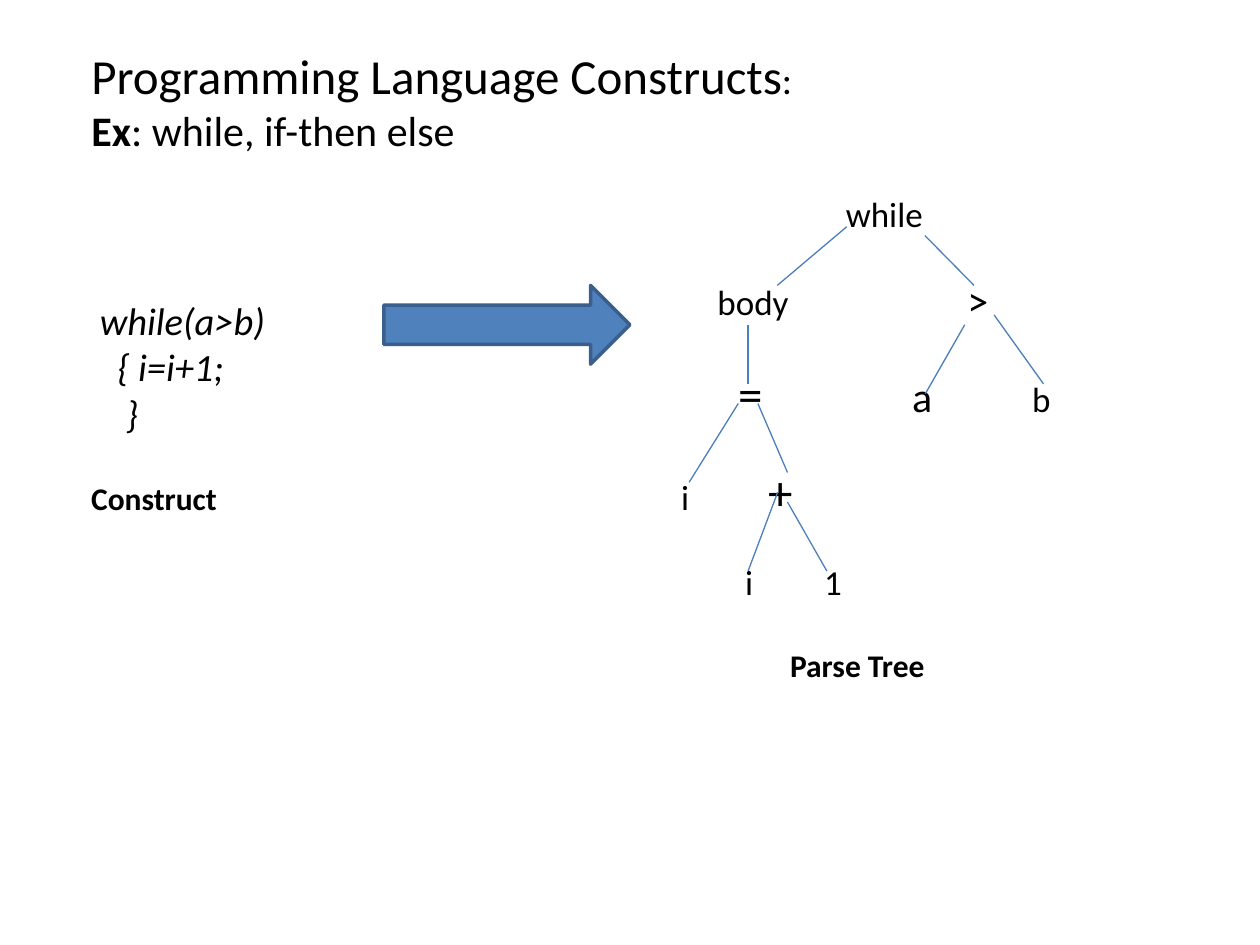
from lxml import etree
from pptx import Presentation
from pptx.dml.color import RGBColor
from pptx.enum import shapes, text
from pptx.oxml import ns
from pptx.util import Pt


def color(value):
    return RGBColor.from_string(value)


def write(para, words, size=20, bold=False, italic=False, fill="000000"):
    span = para.add_run()
    span.text = words
    font = span.font
    font.name = "Calibri"
    font.size = Pt(size)
    font.bold = bold
    font.italic = italic
    font.color.rgb = color(fill)


deck = Presentation()
deck.slide_width, deck.slide_height = Pt(720), Pt(540)
page = deck.slides.add_slide(deck.slide_layouts[5])

# Title with its example line
title = page.shapes.title
title.left, title.top, title.width, title.height = Pt(45), Pt(22.3), Pt(630), Pt(72)
frame = title.text_frame
frame.auto_size = text.MSO_AUTO_SIZE.NONE
frame.vertical_anchor = text.MSO_ANCHOR.TOP
heading, example = frame.paragraphs[0], frame.add_paragraph()
for para in (heading, example):
    para.alignment = text.PP_ALIGN.LEFT
write(heading, "Programming Language Constructs", size=28)
write(heading, ":", size=22)
write(example, "Ex", size=24, bold=True)
write(example, ": while, if-then else", size=24)

# Source code, each line with its own indent
code = page.shapes.add_textbox(Pt(45), Pt(166.3), Pt(160), Pt(88))
code.text_frame.word_wrap = True
for number, (line, indent) in enumerate([("while(a>b)", 5), ("{ i=i+1;", 15), ("}", 20)]):
    para = code.text_frame.paragraphs[0] if number == 0 else code.text_frame.add_paragraph()
    para._p.get_or_add_pPr().set("marL", str(Pt(indent)))
    write(para, line, size=22, italic=True)

# Tree nodes: label, centre, baseline, size
nodes = [
    ("while", 505.3, 129, 20),
    ("body", 430.3, 179.5, 20), (">", 558.7, 179.5, 24),
    ("=", 428.7, 234.5, 28), ("a", 527, 234.5, 24), ("b", 595, 234.5, 20),
    ("i", 391.5, 290.5, 20), ("+", 445.8, 290.5, 28),
    ("i", 428, 339, 20), ("1", 476, 339, 20),
]
node_width = 60
for label, center, baseline, size in nodes:
    box = page.shapes.add_textbox(Pt(center - node_width / 2), Pt(baseline - 0.95 * size),
                                  Pt(node_width), Pt(1.22 * size))
    frame = box.text_frame
    frame.margin_left = frame.margin_right = frame.margin_top = frame.margin_bottom = 0
    frame.word_wrap = True
    frame.paragraphs[0].alignment = text.PP_ALIGN.CENTER
    write(frame.paragraphs[0], label, size=size)

# Tree branches: start and end points
branches = [
    (528.5, 134.6, 556.6, 163.1), (483.8, 129.6, 444.2, 163.1),
    (427.5, 185.6, 427.5, 219.4), (421.9, 230.6, 393.8, 275.6),
    (433.1, 230.6, 450, 270), (551.3, 185.6, 528.8, 225),
    (568.1, 180, 596.3, 219.4), (444.4, 281.3, 427.5, 326.3),
    (450, 286.9, 472.5, 326.3),
]
for ends in branches:
    branch = page.shapes.add_connector(shapes.MSO_CONNECTOR.STRAIGHT, *map(Pt, ends))
    branch.line.color.rgb = color("4B7EBC")
    branch.line.width = Pt(0.75)
    etree.SubElement(branch._element.spPr, ns.qn("a:effectLst"))

# Arrow from code to tree
arrow = page.shapes.add_shape(shapes.MSO_SHAPE.RIGHT_ARROW, Pt(219.4), Pt(163.1), Pt(140.6), Pt(45))
arrow.shadow.inherit = False
arrow.fill.solid()
arrow.fill.fore_color.rgb = color("4F81BD")
arrow.line.color.rgb = color("3A5F8C")
arrow.line.width = Pt(2)

# Captions
for caption, left, top, width in [("Construct", 45, 270, 152), ("Parse Tree", 444.4, 365.6, 158)]:
    box = page.shapes.add_textbox(Pt(left), Pt(top), Pt(width), Pt(29))
    box.text_frame.word_wrap = True
    write(box.text_frame.paragraphs[0], caption, size=18, bold=True)

deck.save("out.pptx")
